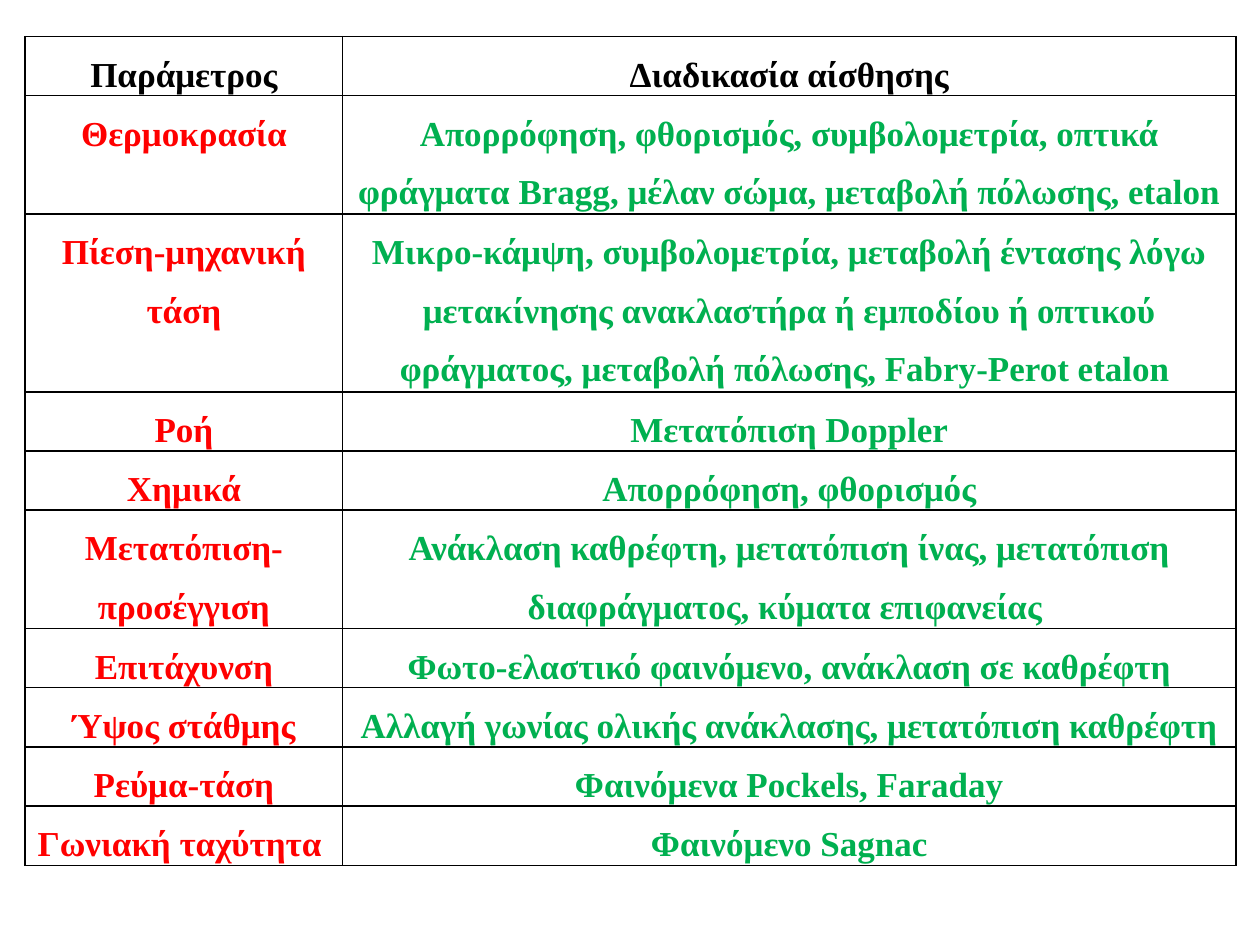
from dataclasses import dataclass

from lxml.etree import SubElement
from pptx import Presentation
from pptx.dml.color import RGBColor as RGB
from pptx.enum.text import MSO_ANCHOR as Anchor, PP_ALIGN as Align
from pptx.oxml.ns import qn
from pptx.slide import Slide
from pptx.table import _Cell as Cell
from pptx.util import Inches, Pt


@dataclass(frozen=True)
class Theme:
    """Colours, type and measures of the slide."""
    font: str = "Times New Roman"
    size: int = 20
    spacing: float = 1.5
    header: str = "000000"
    parameter: str = "FF0000"
    process: str = "00B050"
    border: str = "000000"
    border_width: int = 1
    line_height: float = 0.47


@dataclass(frozen=True)
class Row:
    """A measured parameter, its sensing process and its height in lines."""
    parameter: str
    process: str
    lines: int = 1


THEME = Theme()
COLUMNS = (2.52, 7.09)
ROWS = (
    Row("Παράμετρος", "Διαδικασία αίσθησης"),
    Row("Θερμοκρασία",
        "Απορρόφηση, φθορισμός, συμβολομετρία, οπτικά φράγματα Bragg, "
        "μέλαν σώμα, μεταβολή πόλωσης, etalon", 2),
    Row("Πίεση-μηχανική τάση",
        "Μικρο-κάμψη, συμβολομετρία, μεταβολή έντασης λόγω μετακίνησης "
        "ανακλαστήρα ή εμποδίου ή οπτικού φράγματος, μεταβολή πόλωσης, "
        "Fabry-Perot etalon ", 3),
    Row("Ροή", "Μετατόπιση Doppler"),
    Row("Χημικά", "Απορρόφηση, φθορισμός"),
    Row("Μετατόπιση-προσέγγιση",
        "Ανάκλαση καθρέφτη, μετατόπιση ίνας, μετατόπιση διαφράγματος, "
        "κύματα επιφανείας ", 2),
    Row("Επιτάχυνση", "Φωτο-ελαστικό φαινόμενο, ανάκλαση σε καθρέφτη"),
    Row("Ύψος στάθμης", "Αλλαγή γωνίας ολικής ανάκλασης, μετατόπιση καθρέφτη"),
    Row("Ρεύμα-τάση", "Φαινόμενα Pockels, Faraday"),
    Row("Γωνιακή ταχύτητα ", "Φαινόμενο Sagnac"),
)
CELL_FORMAT = {
    "margin_left": Inches(0.07), "margin_right": Inches(0.07),
    "margin_top": 0, "margin_bottom": 0, "vertical_anchor": Anchor.TOP,
}
PARAGRAPH_FORMAT = {"alignment": Align.CENTER, "line_spacing": THEME.spacing}
FONT_FORMAT = {"name": THEME.font, "size": Pt(THEME.size), "bold": True}


def apply(target: object, values: dict) -> None:
    """Set every attribute in values on the target."""
    for name, value in values.items():
        setattr(target, name, value)


def add_borders(cell: Cell) -> None:
    """Draw a solid line on all four sides of a cell."""
    props = cell._tc.get_or_add_tcPr()
    for side in ("a:lnL", "a:lnR", "a:lnT", "a:lnB"):
        ln = SubElement(props, qn(side), w=str(Pt(THEME.border_width)))
        fill = SubElement(ln, qn("a:solidFill"))
        SubElement(fill, qn("a:srgbClr"), val=THEME.border)


def fill_cell(cell: Cell, text: str, color: str) -> None:
    """Write and format one cell."""
    apply(cell, CELL_FORMAT)
    add_borders(cell)
    cell.fill.background()
    p = cell.text_frame.paragraphs[0]
    apply(p, PARAGRAPH_FORMAT)
    r = p.add_run()
    r.text = text
    apply(r.font, FONT_FORMAT)
    r.font.color.rgb = RGB.from_string(color)


def add_sensing_table(s: Slide) -> None:
    """Add the table of parameters and sensing processes."""
    height = THEME.line_height * sum(row.lines for row in ROWS)
    table = s.shapes.add_table(
        len(ROWS), len(COLUMNS), Inches(0.2), Inches(0.29),
        Inches(sum(COLUMNS)), Inches(height)).table
    apply(table, {"first_row": False, "horz_banding": False})
    for column, width in zip(table.columns, COLUMNS):
        column.width = Inches(width)
    for i, row in enumerate(ROWS):
        table.rows[i].height = Inches(THEME.line_height * row.lines)
        fill_cell(table.cell(i, 0), row.parameter,
                  THEME.parameter if i else THEME.header)
        fill_cell(table.cell(i, 1), row.process,
                  THEME.process if i else THEME.header)


def main() -> None:
    """Build and save the slide."""
    prs = Presentation()
    apply(prs, {"slide_width": Inches(10), "slide_height": Inches(7.5)})
    s = prs.slides.add_slide(prs.slide_layouts[6])
    add_sensing_table(s)
    prs.save("out.pptx")


if __name__ == "__main__":
    main()
